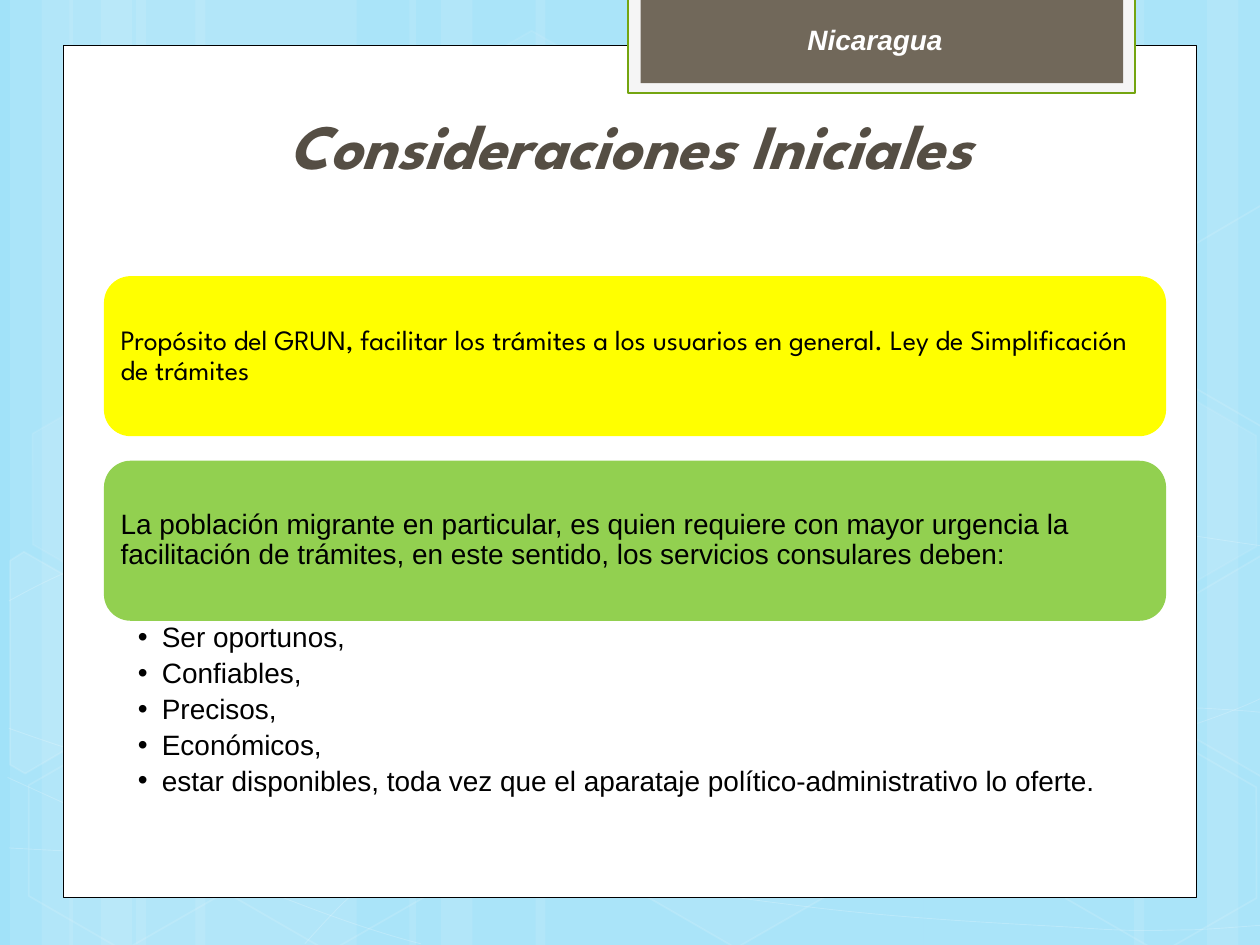
from lxml import etree
from pptx import Presentation
from pptx import util as u
from pptx.dml.color import RGBColor
from pptx.enum import shapes, text
from pptx.oxml import ns

WHITE = RGBColor(255, 255, 255)
BLACK = RGBColor(0, 0, 0)
SKY = RGBColor(0xA1, 0xE2, 0xF9)
SMOKE = RGBColor(0xF5, 0xF5, 0xF5)
OLIVE = RGBColor(0x74, 0xA5, 0x10)
TAUPE = RGBColor(0x71, 0x68, 0x5A)
BROWN = RGBColor(0x55, 0x4E, 0x44)
YELLOW = RGBColor(255, 255, 0)
GREEN = RGBColor(0x92, 0xD0, 0x50)

KIND = shapes.MSO_SHAPE
LEFT, CENTER = text.PP_ALIGN.LEFT, text.PP_ALIGN.CENTER
TOP, MIDDLE, BOTTOM = (text.MSO_ANCHOR.TOP, text.MSO_ANCHOR.MIDDLE,
                       text.MSO_ANCHOR.BOTTOM)
SPARTAN = "League Spartan"

BANDS = [(10.8, 17.5), (0.8, 5), (3.3, 8.3), (15.5, 17.5), (5.5, 5), (8, 8.3),
         (73.3, 17.5), (95.8, 5), (90, 8.3), (42.5, 30.8), (32.5, 5), (35, 8.3)]

CURVES = [
    [(0.7, 67.3), (6.1, 67.6), (11.5, 67.9), (19, 67.8), (26.5, 67.7),
     (35.8, 67.5), (45.8, 66.5), (55.8, 65.5), (70, 63.6), (79.2, 61.7),
     (88.3, 59.8), (97.7, 56.8), (100.7, 55.1)],
    [(0.7, 47.7), (3.6, 46.1), (6.5, 44.6), (12.1, 43.1), (17.8, 41.6),
     (25.9, 39.4), (34.7, 38.7), (43.6, 38), (54.4, 37.9), (65.4, 38.7),
     (76.4, 39.5), (94.7, 42.6), (100.7, 43.4)],
    [(0.6, 61.7), (12.7, 67.2), (24.7, 72.7), (33.4, 74.9)],
    [(0.7, 57.8), (3.8, 58.9), (7, 60), (12.8, 61.6), (18.6, 63.1),
     (27.3, 65.6), (35.7, 67.3), (44, 69), (54.5, 70.8), (62.8, 71.8),
     (71.1, 72.9), (80, 73.3), (85.3, 73.6), (90.5, 74), (91.9, 73.8),
     (94.5, 73.8), (97.1, 73.7), (98.9, 73.5), (100.7, 73.4)],
    [(24.2, 74.9), (26, 72.9), (27.8, 70.9), (30.2, 69.1), (32.6, 67.3),
     (36, 65.3), (38.8, 63.9), (41.6, 62.5), (43.3, 61.9), (47, 60.9),
     (50.6, 59.9), (57.3, 58.5), (60.8, 57.8), (64.4, 57.1), (64.9, 57.1),
     (68, 56.9), (71.1, 56.6), (76, 56.3), (79.4, 56.2), (82.9, 56.1),
     (88.6, 56.2), (88.6, 56.2), (90.8, 56.2), (93.1, 56.2), (95.3, 56.2),
     (97.1, 56.3), (98.8, 56.4), (99.7, 56.5), (100.6, 56.6), (100.3, 56.5),
     (100.6, 56.6)],
]

HEXES = [(33.4, 3.6, 4, 8), (49.7, 58.9, 6, 12), (1.1, 59.1, 0, 12),
         (1.4, 31.2, 7, 8), (17.4, 59.2, 0, 12), (83.4, 59.3, 0, 12),
         (83.4, 31.4, 7, 8)]

CUTS = [
    ([(0.8, 44.5), (1.9, 43.8), (9.6, 48.2), (9.5, 57), (2, 61.4),
      (0.8, 60.7)], 10),
    ([(92.6, 48.5), (100.1, 44.1), (100.9, 44.6), (100.9, 61.3),
      (100.2, 61.7), (92.6, 57.3)], 4),
    ([(92.6, 20.7), (100.1, 16.3), (101, 16.8), (100.9, 33.5),
      (100.2, 33.9), (92.6, 29.5)], 0),
]


class Deck:
    cols, rows = 100, 75

    def __init__(self):
        self.prs = Presentation()
        self.prs.slide_width, self.prs.slide_height = u.Inches(10), u.Inches(7.5)
        self.cell = self.prs.slide_width // self.cols
        self.slide = self.prs.slides.add_slide(self.prs.slide_layouts[6])
        back = self.slide.background.fill
        back.solid()
        back.fore_color.rgb = SKY

    def span(self, *sides):
        return [u.Emu(round(s * self.cell)) for s in sides]

    def fade(self, shape, tags, share):
        if share < 100:
            color = shape.element.spPr.find("/".join(map(ns.qn, tags)))
            etree.SubElement(color, ns.qn("a:alpha")).set("val", str(share * 1000))

    def paint(self, shape, fill=None, veil=100, line=None, width=1, mist=100):
        shape.shadow.inherit = False
        tags = ["a:solidFill", "a:srgbClr"]
        if fill is None or veil == 0:
            shape.fill.background()
        else:
            shape.fill.solid()
            shape.fill.fore_color.rgb = fill
            self.fade(shape, tags, veil)
        if line is None:
            shape.line.fill.background()
        else:
            shape.line.color.rgb = line
            shape.line.width = u.Pt(width)
            self.fade(shape, ["a:ln"] + tags, mist)
        return shape

    def block(self, at, kind=KIND.RECTANGLE, **look):
        shape = self.slide.shapes.add_shape(kind, *self.span(*at))
        return self.paint(shape, **look)

    def hexa(self, x, y, veil, mist):
        shape = self.block((x, y, 17.5, 15.2), KIND.HEXAGON, fill=WHITE,
                           veil=veil, line=WHITE, mist=mist)
        shape.adjustments[0] = 0.29
        shape.rotation = 30

    def shard(self, dots, close=True, **look):
        pen = self.slide.shapes.build_freeform(*self.span(*dots[0]))
        pen.add_line_segments([self.span(*d) for d in dots[1:]], close=close)
        return self.paint(pen.convert_to_shape(), line=WHITE, **look)

    def curve(self, knots):
        shape = self.shard(knots, close=False, width=0.5, mist=20)
        legs = list(shape.element.iter(ns.qn("a:lnTo")))
        for i in range(0, len(legs), 3):
            bend = etree.Element(ns.qn("a:cubicBezTo"))
            legs[i].addprevious(bend)
            for leg in legs[i:i + 3]:
                bend.append(leg[0])
                leg.getparent().remove(leg)

    def label(self, at, lines, size=16, font="Arial", color=BLACK, slant=False,
              align=LEFT, anchor=MIDDLE, pads=(1, 0.5, 1, 0.5), lead=1, gap=0):
        frame = self.slide.shapes.add_textbox(*self.span(*at)).text_frame
        frame.text = "\n".join(lines)
        frame.word_wrap = True
        frame.vertical_anchor = anchor
        (frame.margin_left, frame.margin_top,
         frame.margin_right, frame.margin_bottom) = self.span(*pads)
        for para in frame.paragraphs:
            para.alignment = align
            para.line_spacing = lead
            para.space_after = u.Pt(gap)
            for run in para.runs:
                run.font.size = u.Pt(size)
                run.font.name = font
                run.font.color.rgb = color
                run.font.bold = run.font.italic = slant
        return frame

    def card(self, x, y, wide, high, fill, line, font):
        self.block((x, y, wide, high), KIND.ROUNDED_RECTANGLE, fill=fill)
        rim = 0.62
        self.label((x + rim, y + rim, wide - 2 * rim, high - 2 * rim), [line],
                   font=font, pads=(0.7,) * 4, lead=0.9)

    def points(self, at, lines):
        frame = self.label(at, lines, anchor=TOP, pads=(2.7, 0.2, 1.2, 0.2),
                           lead=0.9, gap=3.2)
        hang = self.span(1.9)[0]
        for para in frame.paragraphs:
            para.level = 1
            props = para._p.get_or_add_pPr()
            props.set("marL", str(hang))
            props.set("indent", str(-hang))
            etree.SubElement(props, ns.qn("a:buFont")).set("typeface", "Arial")
            etree.SubElement(props, ns.qn("a:buChar")).set("char", "•")


def main():
    deck = Deck()
    for x, wide in BANDS:
        deck.block((x, 0, wide, deck.rows), fill=WHITE, veil=10)
    for knots in CURVES:
        deck.curve(knots)
    for hexa in HEXES:
        deck.hexa(*hexa)
    for dots, veil in CUTS:
        deck.shard(dots, fill=WHITE, veil=veil, mist=12)

    deck.block((5, 3.6, 90, 67.65), fill=WHITE, line=BLACK, width=0.5)
    deck.block((49.85, -0.2, 40.2, 7.6), fill=SMOKE, line=OLIVE, width=1.25)
    deck.block((50.85, -0.2, 38.3, 6.8), fill=TAUPE)
    deck.label((5.9, 9.95, 88.2, 5), ["Consideraciones Iniciales"], size=36,
               font=SPARTAN, color=BROWN, slant=True, align=CENTER, anchor=BOTTOM)

    cards = [
        (YELLOW, "Propósito del GRUN, facilitar los trámites a los usuarios en "
                 "general. Ley de Simplificación de trámites", SPARTAN),
        (GREEN, "La población migrante en particular, es quien requiere con mayor "
                "urgencia la facilitación de trámites, en este sentido, los "
                "servicios consulares deben:", "Arial"),
    ]
    for i, card in enumerate(cards):
        deck.card(8.25, 21.92 + 14.65 * i, 84.3, 12.7, *card)
    deck.points((8.25, 49.3, 84.3, 14),
                ["Ser oportunos,", "Confiables,", "Precisos,", "Económicos,",
                 "estar disponibles, toda vez que el aparataje "
                 "político-administrativo lo oferte."])
    deck.label((53.1, 1.3, 32.7, 3.7), ["Nicaragua"], color=WHITE, slant=True,
               align=CENTER, anchor=TOP)
    deck.prs.save("out.pptx")


if __name__ == "__main__":
    main()
